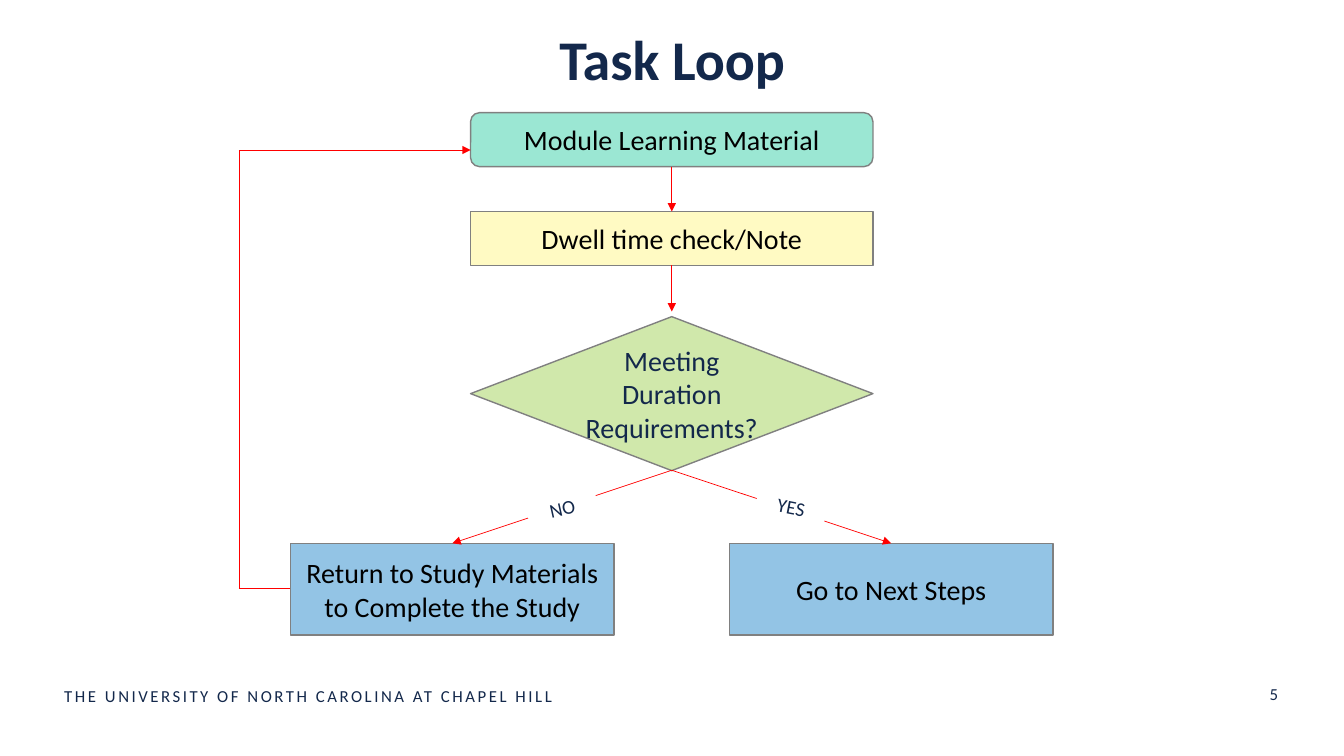
from lxml import etree
from pptx import Presentation
from pptx.dml.color import RGBColor
from pptx.enum import shapes, text
from pptx.oxml import ns
from pptx.util import Cm, Pt

NAVY = RGBColor(0x13, 0x28, 0x4B)
BLACK = RGBColor(0, 0, 0)
WHITE = RGBColor(0xFF, 0xFF, 0xFF)
GREY = RGBColor(0x80, 0x80, 0x80)
MINT = RGBColor(0x9B, 0xE7, 0xD3)
YELLOW = RGBColor(0xFF, 0xFA, 0xC3)
GREEN = RGBColor(0xD0, 0xE8, 0xAB)
BLUE = RGBColor(0x93, 0xC4, 0xE5)
RED = RGBColor(0xFF, 0, 0)


def write(shape, words, size=20, color=BLACK, bold=False, spacing=None,
          align=text.PP_ALIGN.CENTER, anchor=text.MSO_ANCHOR.MIDDLE):
    frame = shape.text_frame
    frame.word_wrap = True
    frame.auto_size = text.MSO_AUTO_SIZE.NONE
    frame.vertical_anchor = anchor
    paragraph = frame.paragraphs[0]
    paragraph.alignment = align
    run = paragraph.add_run()
    run.text = words
    run.font.name = "Calibri"
    run.font.size = Pt(size)
    run.font.bold = bold
    run.font.color.rgb = color
    if spacing:
        run.font._element.set("spc", str(spacing))


presentation = Presentation()
presentation.slide_width = Cm(33.87)
presentation.slide_height = Cm(19.05)
slide = presentation.slides.add_slide(presentation.slide_layouts[5])

title = slide.shapes.title
title.left, title.top, title.width, title.height = Cm(9.17), Cm(0.48), Cm(15.54), Cm(2.9)
write(title, "Task Loop", size=40, color=NAVY, bold=True, anchor=text.MSO_ANCHOR.TOP)

footer = slide.shapes.add_textbox(Cm(1.37), Cm(17.15), Cm(17.96), Cm(0.76))
write(footer, "THE UNIVERSITY OF NORTH CAROLINA AT CHAPEL HILL", size=12, color=NAVY,
      spacing=180, align=text.PP_ALIGN.LEFT, anchor=text.MSO_ANCHOR.TOP)
page_number = slide.shapes.add_textbox(Cm(24.94), Cm(17.15), Cm(7.52), Cm(0.69))
write(page_number, "5", size=12, color=NAVY, align=text.PP_ALIGN.RIGHT)

CENTER, NO_CENTER, YES_CENTER = 16.93, 11.4, 22.46
SHAPE = shapes.MSO_SHAPE
steps = [
    (SHAPE.ROUNDED_RECTANGLE, CENTER, 2.84, 10.14, 1.36, MINT, BLACK,
     "Module Learning Material"),
    (SHAPE.RECTANGLE, CENTER, 5.33, 10.14, 1.36, YELLOW, BLACK, "Dwell time check/Note"),
    (SHAPE.FLOWCHART_DECISION, CENTER, 7.98, 10.14, 3.88, GREEN, NAVY,
     "Meeting Duration Requirements?"),
    (SHAPE.FLOWCHART_PROCESS, NO_CENTER, 13.69, 8.15, 2.31, BLUE, BLACK,
     "Return to Study Materials to Complete the Study"),
    (SHAPE.FLOWCHART_PROCESS, YES_CENTER, 13.69, 8.15, 2.31, BLUE, BLACK,
     "Go to Next Steps"),
]
for kind, center, top, width, height, fill, color, words in steps:
    step = slide.shapes.add_shape(kind, Cm(center - width / 2), Cm(top), Cm(width), Cm(height))
    step.shadow.inherit = False
    step.fill.solid()
    step.fill.fore_color.rgb = fill
    step.line.color.rgb = GREY
    step.line.width = Pt(1)
    write(step, words, color=color)

LOOP_X, LOOP_TOP, LOOP_BOTTOM = 6.02, 3.78, 14.83
links = [
    (CENTER, 4.2, CENTER, 5.33, True),
    (CENTER, 6.69, CENTER, 7.85, True),
    (CENTER, 11.85, NO_CENTER, 13.69, True),
    (CENTER, 11.85, YES_CENTER, 13.69, True),
    (LOOP_X, LOOP_BOTTOM, 7.32, LOOP_BOTTOM, False),
    (LOOP_X, LOOP_TOP, LOOP_X, LOOP_BOTTOM, False),
    (LOOP_X, LOOP_TOP, 11.86, LOOP_TOP, True),
]
for start_x, start_y, end_x, end_y, has_arrow in links:
    link = slide.shapes.add_connector(
        shapes.MSO_CONNECTOR.STRAIGHT, Cm(start_x), Cm(start_y), Cm(end_x), Cm(end_y))
    link.line.color.rgb = RED
    link.line.width = Pt(0.5)
    if has_arrow:
        etree.SubElement(link.line._get_or_add_ln(), ns.qn("a:tailEnd"), type="triangle")
    etree.SubElement(link._element.spPr, ns.qn("a:effectLst"))

for words, left, top, rotation in [("NO", 13.28, 12.37, 347.3), ("YES", 19.05, 12.34, 11.1)]:
    label = slide.shapes.add_shape(SHAPE.RECTANGLE, Cm(left), Cm(top), Cm(1.78), Cm(0.86))
    label.shadow.inherit = False
    label.rotation = rotation
    label.fill.solid()
    label.fill.fore_color.rgb = WHITE
    label.line.fill.background()
    write(label, words, size=14, color=NAVY, anchor=text.MSO_ANCHOR.TOP)

presentation.save("out.pptx")
